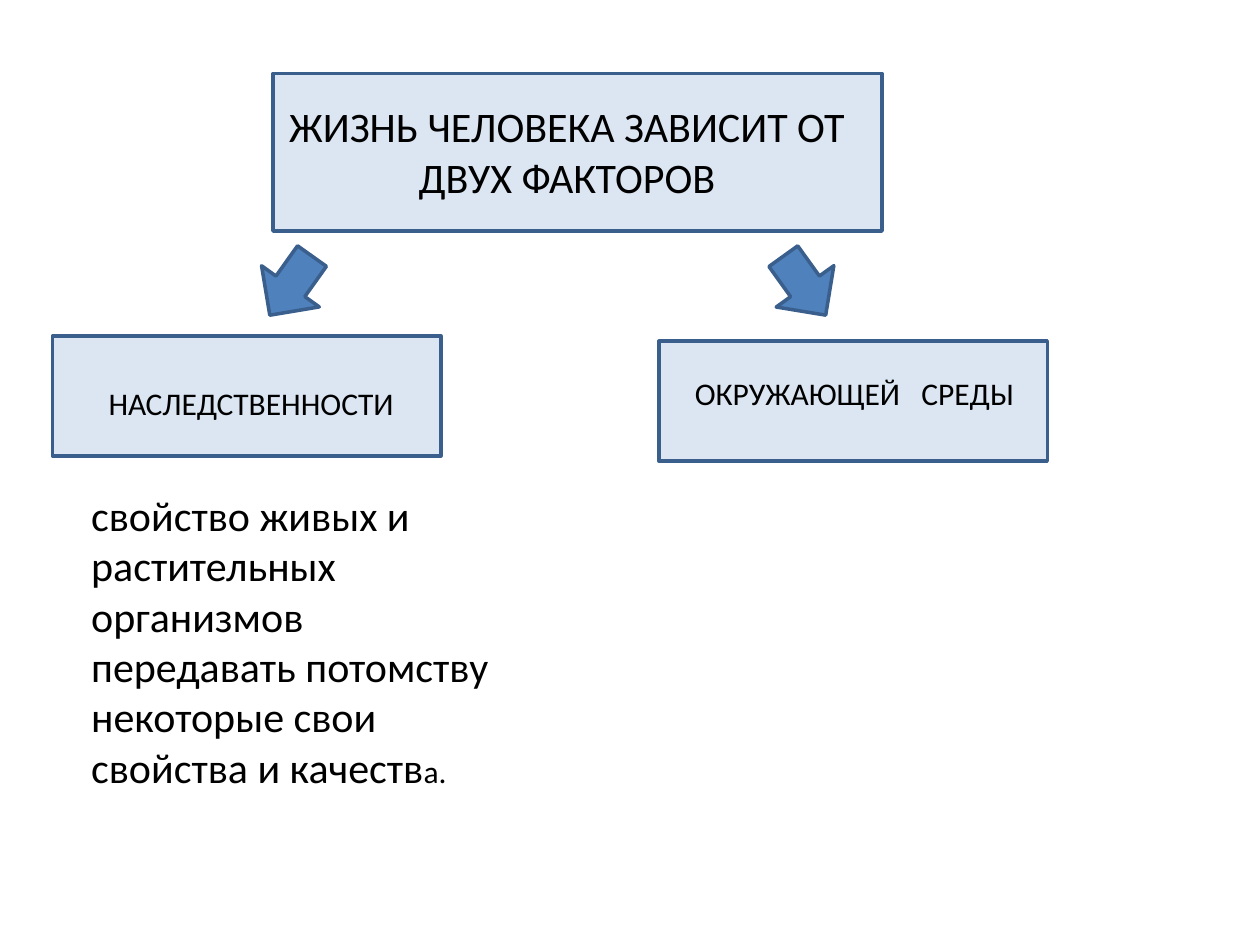
"""Build a slide on the two factors that human life depends on."""
from pptx import Presentation
from pptx.dml.color import RGBColor
from pptx.enum.shapes import MSO_SHAPE as Shape
from pptx.enum.text import MSO_AUTO_SIZE as AutoSize, PP_ALIGN as Align
from pptx.util import Pt

FONT, INK, LINE = "Calibri", "000000", "3A5F8C"
PALE, BLUE = "DCE6F2", "4F81BD"

BOXES = [
    (376.5, 195, 222, 68.5),
    (30, 192, 222, 68.5),
    (156, 42, 348, 90),
]
ARROWS = [(146, 35.5), (439.5, 324.3)]
ARROW_TOP, ARROW_SIZE = 142.5, (40.5, 41.5)

TEXTS = [
    ((144, 54, 360, 65.5), Align.CENTER, True,
     [("ЖИЗНЬ ЧЕЛОВЕКА ЗАВИСИТ ОТ ДВУХ ФАКТОРОВ", 24)]),
    ((55, 216, 179, 29), Align.LEFT, False, [("НАСЛЕДСТВЕННОСТИ", 18)]),
    ((390, 210, 199, 29), Align.LEFT, False, [("ОКРУЖАЮЩЕЙ   СРЕДЫ", 18)]),
    ((45, 276, 243, 181.5), Align.LEFT, True,
     [("свойство живых и растительных организмов передавать потомству "
       "некоторые свои свойства и качеств", 24), ("а.", 18)]),
]


def color(value):
    return RGBColor.from_string(value)


def add_figure(s, kind, place, fill, angle=0):
    sp = s.shapes.add_shape(kind, *map(Pt, place))
    sp.shadow.inherit = False
    sp.rotation = angle
    sp.fill.solid()
    sp.fill.fore_color.rgb = color(fill)
    sp.line.color.rgb = color(LINE)
    sp.line.width = Pt(2)


def add_text(s, place, align, wrap, runs):
    tf = s.shapes.add_textbox(*map(Pt, place)).text_frame
    tf.word_wrap = wrap
    tf.auto_size = AutoSize.SHAPE_TO_FIT_TEXT
    p = tf.paragraphs[0]
    p.alignment = align
    for text, size in runs:
        r = p.add_run()
        r.text = text
        r.font.name, r.font.size = FONT, Pt(size)
        r.font.color.rgb = color(INK)


def main():
    prs = Presentation()
    prs.slide_width, prs.slide_height = Pt(720), Pt(540)
    s = prs.slides.add_slide(prs.slide_layouts[6])
    for place in BOXES:
        add_figure(s, Shape.RECTANGLE, place, PALE)
    for left, angle in ARROWS:
        add_figure(s, Shape.DOWN_ARROW, (left, ARROW_TOP, *ARROW_SIZE), BLUE, angle)
    for item in TEXTS:
        add_text(s, *item)
    prs.save("out.pptx")


if __name__ == "__main__":
    main()
